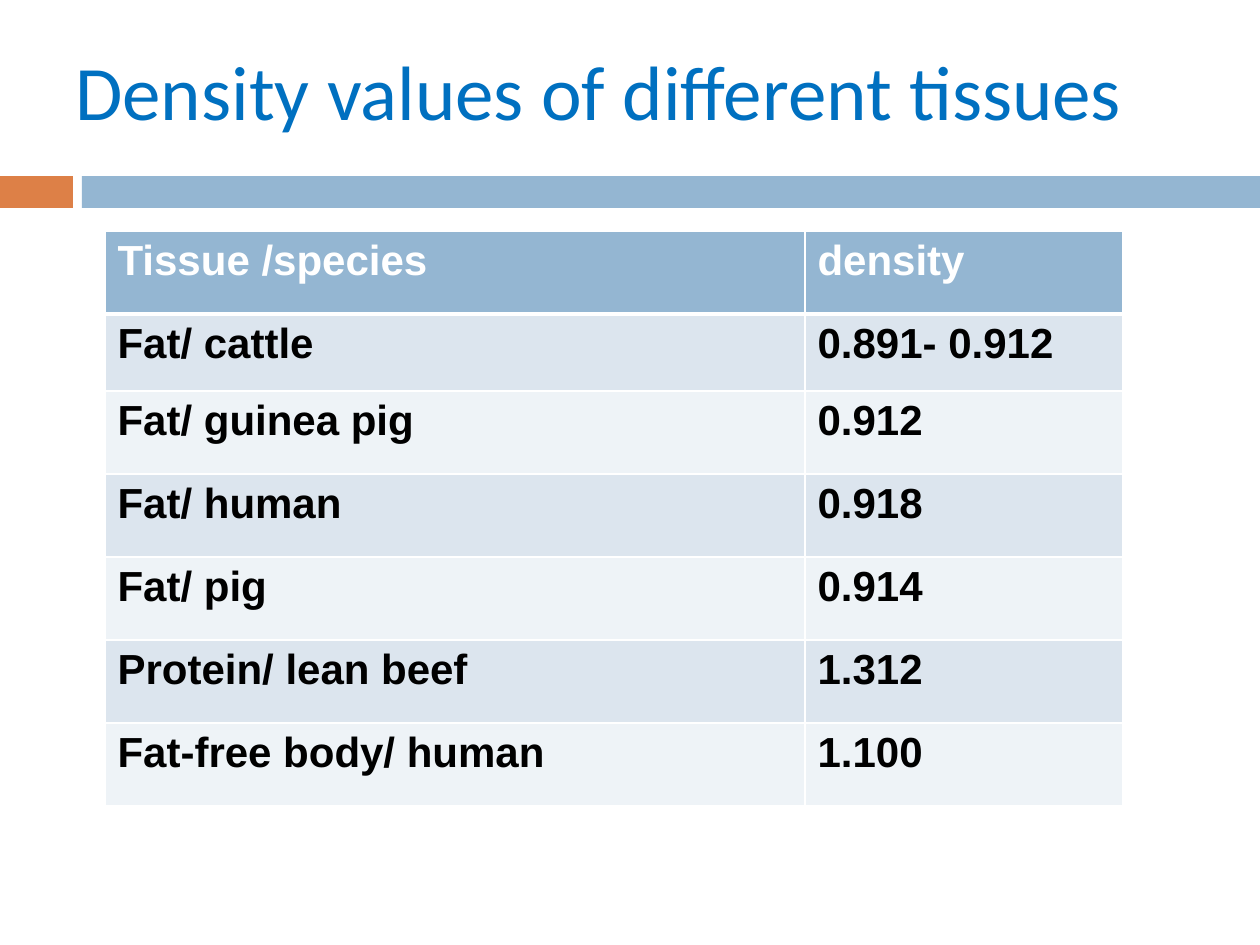
from lxml import etree
from pptx import Presentation
from pptx import util as u
from pptx.dml.color import RGBColor
from pptx.enum import shapes, text
from pptx.oxml.ns import qn

INK = {
    "title": "0070C0", "accent": "DD8047", "bar": "94B6D2",
    "dark": "DCE5EE", "light": "EEF3F7", "white": "FFFFFF", "black": "000000",
}
ROWS = [
    ("Tissue /species", "density"),
    ("Fat/ cattle", "0.891- 0.912"),
    ("Fat/ guinea pig", "0.912"),
    ("Fat/ human", "0.918"),
    ("Fat/ pig", "0.914"),
    ("Protein/ lean beef", "1.312"),
    ("Fat-free body/ human", "1.100"),
]


def px(num):
    return u.Emu(round(num * 914400 / 126))


class Deck:
    def __init__(self, wide, high):
        self.prs = Presentation()
        self.prs.slide_width, self.prs.slide_height = px(wide), px(high)
        self.slide = self.prs.slides.add_slide(self.prs.slide_layouts[6])

    def paint(self, item, ink):
        item.fill.solid()
        item.fill.fore_color.rgb = RGBColor.from_string(INK[ink])

    def style(self, frame, face, size, ink, bold=False):
        for run in frame.paragraphs[0].runs:
            run.font.name, run.font.size, run.font.bold = face, u.Pt(size), bold
            run.font.color.rgb = RGBColor.from_string(INK[ink])

    def bar(self, box, ink):
        shape = self.slide.shapes.add_shape(shapes.MSO_SHAPE.RECTANGLE, *map(px, box))
        shape.shadow.inherit = False
        shape.line.fill.background()
        self.paint(shape, ink)

    def title(self, box, words):
        frame = self.slide.shapes.add_textbox(*map(px, box)).text_frame
        frame.word_wrap = True
        frame.vertical_anchor = text.MSO_ANCHOR.MIDDLE
        frame.text = words
        self.style(frame, "Calibri", 44, "title")

    def edge(self, cell, side, width):
        line = etree.SubElement(cell._tc.get_or_add_tcPr(), qn("a:ln" + side), w=str(u.Pt(width)))
        fill = etree.SubElement(line, qn("a:solidFill"))
        etree.SubElement(fill, qn("a:srgbClr"), val=INK["white"])

    def table(self, left, top, cols, highs, rows):
        size = (left, top, sum(cols), sum(highs))
        grid = self.slide.shapes.add_table(len(rows), len(cols), *map(px, size)).table
        grid.first_row = grid.horz_banding = False
        for col, width in zip(grid.columns, cols):
            col.width = px(width)
        for r, (row, high) in enumerate(zip(rows, highs)):
            grid.rows[r].height = px(high)
            fill = "bar" if r == 0 else ("light", "dark")[r % 2]
            for c, words in enumerate(row):
                cell = grid.cell(r, c)
                for side in "LRTB":
                    thick = (r, side) in ((0, "B"), (1, "T"))
                    self.edge(cell, side, 3 if thick else 1)
                self.paint(cell, fill)
                cell.text_frame.text = words
                self.style(cell.text_frame, "Arial", 24, "black" if r else "white", True)


def main():
    deck = Deck(1260, 945)
    deck.bar((0, 176, 73, 32), "accent")
    deck.bar((82, 176, 1178, 32), "bar")
    deck.title((63, 32, 1134, 116), "Density values of different tissues")
    deck.table(105, 231, (700, 318), [83, 77] + [83] * 5, ROWS)
    deck.prs.save("out.pptx")


if __name__ == "__main__":
    main()
